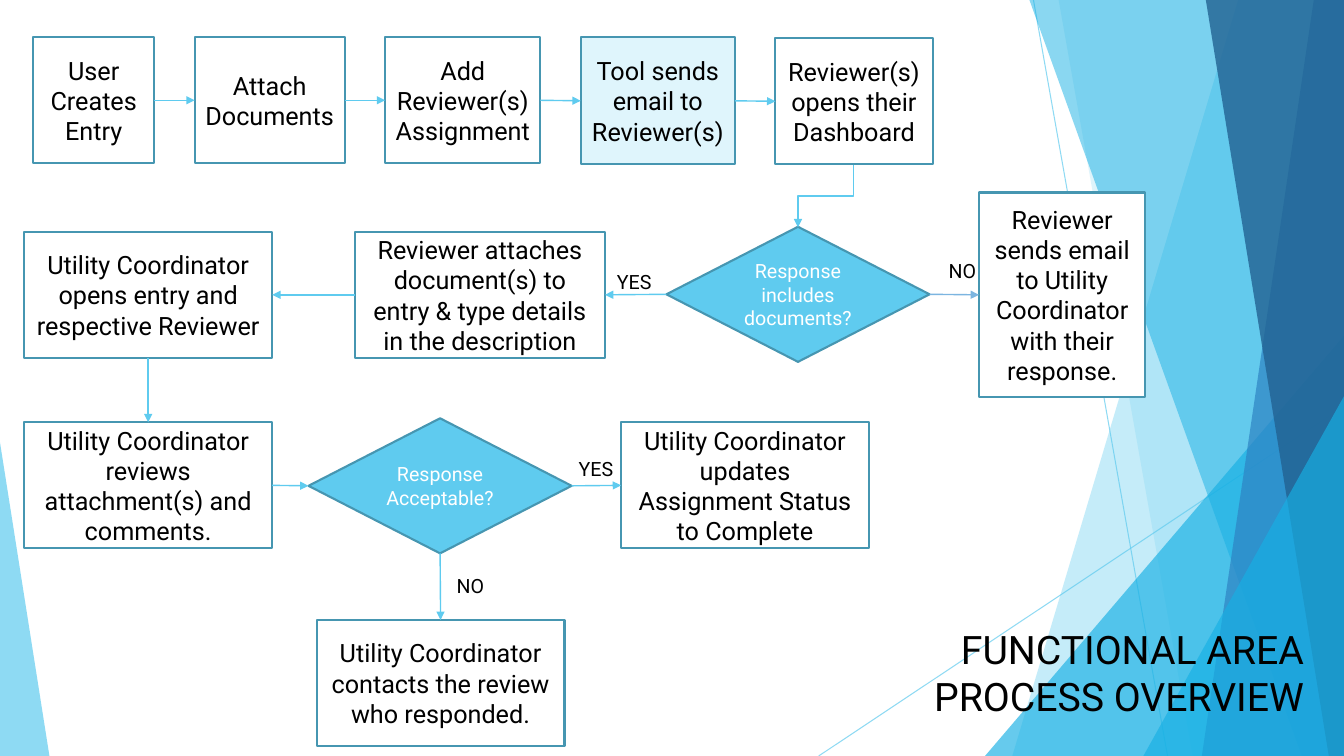
from lxml import etree
from pptx import Presentation
from pptx.enum import shapes, text
from pptx.dml.color import RGBColor
from pptx.oxml import ns
from pptx.util import Inches, Pt

HUES = {
    "sky": "5FCBEF", "cyan": "17B0E4", "blue": "2E83C3", "navy": "226292",
    "edge": "4696B1", "pale": "DFF5FC", "soft": "7CB5E0",
    "white": "FFFFFF", "black": "000000",
}
KIND = shapes.MSO_SHAPE
LINK = shapes.MSO_CONNECTOR
ALIGN = text.PP_ALIGN
TOP, LEFT, BOTTOM, RIGHT = range(4)  # connection sites of boxes and diamonds


def paint(part, hue, alpha=100):
    """Give a fill or a line one solid colour with the given opacity."""
    part.fill.solid()
    part.fill.fore_color.rgb = RGBColor.from_string(HUES[hue])
    if alpha < 100:
        clr = part.fill._xPr.find(".//" + ns.qn("a:srgbClr"))
        etree.SubElement(clr, ns.qn("a:alpha"), val=str(alpha * 1000))


def write(shape, words, size, hue, align):
    frame = shape.text_frame
    frame.word_wrap = True
    frame.text = words
    for para in frame.paragraphs:
        para.alignment = align
        for run in para.runs:
            run.font.name = "Roboto"
            run.font.size = Pt(size)
            run.font.color.rgb = RGBColor.from_string(HUES[hue])


prs = Presentation()
prs.slide_width, prs.slide_height = Inches(13.33), Inches(7.5)
slide = prs.slides.add_slide(prs.slide_layouts[6])
tree = slide.shapes

# Backdrop: thin rays, then translucent facets from back to front
rays = [(10.25, 0, 11.58, 7.5), (13.33, 4.03, 8.12, 7.5)]
for ends in rays:
    ray = tree.add_connector(LINK.STRAIGHT, *map(Inches, ends))
    ray.line.width = Pt(0.75)
    paint(ray.line, "sky", 70)
    etree.SubElement(ray._element.spPr, ns.qn("a:effectLst"))

# A band reaches from its top and bottom x to the right edge;
# a wedge has its left, top, width, height and apex.
facets = [
    ("band", (12.28, 10.04), "sky", 36),
    ("band", (10.5, 11.83), "sky", 20),
    ("wedge", (9.77, 3.33, 3.56, 4.17, 1), "cyan", 66),
    ("band", (10.21, 12.91), "cyan", 50),
    ("band", (13.03, 11.92), "blue", 70),
    ("band", (11.96, 13.18), "navy", 80),
    ("wedge", (11.34, 3.93, 1.99, 3.57, 1), "cyan", 66),
    ("wedge", (0, 4.39, 0.49, 3.11, 0), "sky", 70),
]
for form, dims, hue, alpha in facets:
    if form == "band":
        high, low = dims
        pen = tree.build_freeform(Inches(high), Inches(0))
        rest = [(13.33, 0), (13.33, 7.5), (low, 7.5)]
        pen.add_line_segments([(Inches(x), Inches(y)) for x, y in rest])
        facet = pen.convert_to_shape()
    else:
        *box, apex = dims
        facet = tree.add_shape(KIND.ISOSCELES_TRIANGLE, *map(Inches, box))
        facet.adjustments[0] = apex
    facet.shadow.inherit = False
    facet.line.fill.background()
    paint(facet, hue, alpha)

# Steps of the flow: name, left, top, width, height, fill, words
steps = [
    ("create", 0.33, 0.37, 1.2, 1.25, None, "User Creates Entry"),
    ("attach", 1.93, 0.37, 1.49, 1.25, None, "Attach Documents"),
    ("assign", 3.82, 0.37, 1.54, 1.25, None, "Add Reviewer(s) Assignment"),
    ("open", 7.69, 0.38, 1.56, 1.25, None, "Reviewer(s) opens their Dashboard"),
    ("mail", 5.76, 0.37, 1.53, 1.26, "pale", "Tool sends email to Reviewer(s)"),
    ("detail", 3.52, 2.3, 2.48, 1.25, None,
     "Reviewer attaches document(s) to entry & type details in the description"),
    ("docs", 6.61, 2.25, 2.61, 1.34, "sky", "Response includes documents?"),
    ("reply", 9.71, 1.91, 1.65, 2.03, "white",
     "Reviewer sends email to Utility Coordinator with their response."),
    ("entry", 0.24, 2.3, 2.46, 1.25, None,
     "Utility Coordinator opens entry and respective Reviewer"),
    ("review", 0.24, 4.19, 2.46, 1.25, None,
     "Utility Coordinator reviews attachment(s) and comments."),
    ("accept", 3.06, 4.15, 2.61, 1.34, "sky", "Response Acceptable?"),
    ("finish", 6.16, 4.19, 2.46, 1.25, None,
     "Utility Coordinator updates Assignment Status to Complete"),
    ("contact", 3.14, 6.15, 2.46, 1.25, None,
     "Utility Coordinator contacts the review who responded."),
]
nodes = {}
for name, x, y, w, h, fill, words in steps:
    choice = fill == "sky"
    kind = KIND.FLOWCHART_DECISION if choice else KIND.RECTANGLE
    node = tree.add_shape(kind, Inches(x), Inches(y), Inches(w), Inches(h))
    node.shadow.inherit = False
    node.line.width = Pt(1.5)
    paint(node.line, "edge")
    if fill:
        paint(node, fill)
    else:
        node.fill.background()
    node.text_frame.vertical_anchor = text.MSO_ANCHOR.MIDDLE
    size, ink = (14, "white") if choice else (18, "black")
    write(node, words, size, ink, ALIGN.CENTER)
    nodes[name] = node

# Arrows between the steps
links = [
    ("create", RIGHT, "attach", LEFT), ("attach", RIGHT, "assign", LEFT),
    ("assign", RIGHT, "mail", LEFT), ("mail", RIGHT, "open", LEFT),
    ("detail", LEFT, "entry", RIGHT), ("docs", LEFT, "detail", RIGHT),
    ("docs", RIGHT, "reply", LEFT), ("entry", BOTTOM, "review", TOP),
    ("review", RIGHT, "accept", LEFT), ("accept", RIGHT, "finish", LEFT),
    ("accept", BOTTOM, "contact", TOP),
]
arrows = []
for start, exit, end, entry in links:
    arrow = tree.add_connector(LINK.STRAIGHT, 0, 0, 0, 0)
    arrow.begin_connect(nodes[start], exit)
    arrow.end_connect(nodes[end], entry)
    arrows.append((arrow, "soft" if end == "reply" else "sky"))

# The elbow leaves downwards, so its frame is turned a quarter
bend = tree.add_connector(LINK.ELBOW, Inches(7.88), Inches(1.67),
                          Inches(8.5), Inches(2.22))
bend._element.spPr.find(ns.qn("a:xfrm")).set("rot", "5400000")
arrows.append((bend, "sky"))

for arrow, hue in arrows:
    arrow.line.width = Pt(1)
    paint(arrow.line, hue)
    etree.SubElement(arrow.line._ln, ns.qn("a:tailEnd"), type="triangle")
    etree.SubElement(arrow._element.spPr, ns.qn("a:effectLst"))

# Branch labels and title
notes = [
    (6.02, 2.63, 0.59, 0.34, "YES", 14, ALIGN.LEFT),
    (5.64, 4.48, 0.59, 0.34, "YES", 14, ALIGN.LEFT),
    (9.31, 2.52, 0.59, 0.34, "NO", 14, ALIGN.LEFT),
    (4.43, 5.64, 0.59, 0.34, "NO", 14, ALIGN.LEFT),
    (8.83, 6.15, 4.2, 1.04, "FUNCTIONAL AREA\nPROCESS OVERVIEW", 28, ALIGN.RIGHT),
]
for x, y, w, h, words, size, align in notes:
    note = tree.add_textbox(Inches(x), Inches(y), Inches(w), Inches(h))
    write(note, words, size, "black", align)

prs.save("out.pptx")
